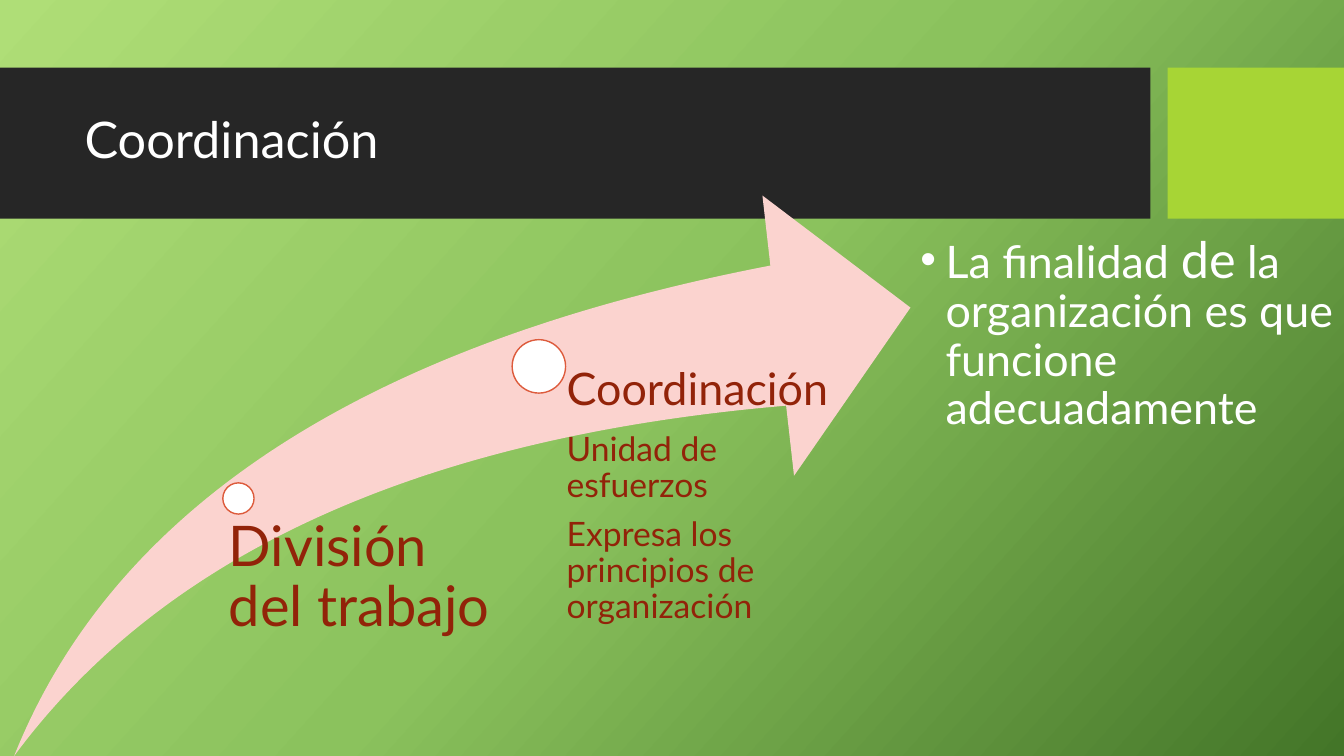
from copy import deepcopy

from lxml.etree import SubElement
from pptx import Presentation
from pptx.dml.color import RGBColor
from pptx.enum.shapes import MSO_SHAPE as Shape
from pptx.enum.text import MSO_ANCHOR as Anchor
from pptx.oxml.ns import qn
from pptx.util import Inches, Pt

FONT = "Lato"
COLORS = {
    "light": "AFDE77",
    "middle": "8BC25D",
    "deep": "437528",
    "band": "262626",
    "lime": "A7D535",
    "white": "FFFFFF",
    "pink": "FBD3CF",
    "ring": "DD5B3C",
    "rust": "922309",
}


def color(name):
    return RGBColor.from_string(COLORS[name])


def paint_background(page, names, angle):
    """Fill the page with evenly spaced gradient stops; angle is clockwise."""
    fill = page.background.fill
    fill.gradient()
    fill.gradient_angle = 360 - angle
    stop_list = page.element.find(".//" + qn("a:gsLst"))
    while len(stop_list) < len(names):
        stop_list.append(deepcopy(stop_list[0]))
    for index, (stop, name) in enumerate(zip(fill.gradient_stops, names)):
        stop.position = index / (len(names) - 1)
        stop.color.rgb = color(name)


def add_figure(page, kind, left, top, width, height, fill, line=None):
    figure = page.shapes.add_shape(
        kind, Inches(left), Inches(top), Inches(width), Inches(height))
    figure.shadow.inherit = False
    figure.fill.solid()
    figure.fill.fore_color.rgb = color(fill)
    if line:
        figure.line.color.rgb = color(line)
        figure.line.width = Pt(1)
    else:
        figure.line.fill.background()
    return figure


def add_bullet(para, indent):
    properties = para._p.get_or_add_pPr()
    properties.set("marL", str(Inches(indent)))
    properties.set("indent", str(-Inches(indent)))
    SubElement(properties, qn("a:buFont"), typeface="Arial")
    SubElement(properties, qn("a:buChar"), char="•")


def add_text(page, left, top, width, height, paragraphs, ink="white",
             insets=(0.1, 0.05, 0.1, 0.05), anchor=Anchor.TOP, bullet=False):
    """Each paragraph is (list of (text, size) spans, points of space after)."""
    box = page.shapes.add_textbox(
        Inches(left), Inches(top), Inches(width), Inches(height))
    frame = box.text_frame
    frame.word_wrap = True
    frame.vertical_anchor = anchor
    (frame.margin_left, frame.margin_top,
     frame.margin_right, frame.margin_bottom) = map(Inches, insets)
    for index, (spans, space_after) in enumerate(paragraphs):
        para = frame.add_paragraph() if index else frame.paragraphs[0]
        if bullet:
            add_bullet(para, 0.25)
        para.line_spacing = 0.9
        para.space_after = Pt(space_after)
        for text, size in spans:
            span = para.add_run()
            span.text = text
            span.font.name = FONT
            span.font.size = Pt(size)
            span.font.color.rgb = color(ink)


def main():
    deck = Presentation()
    deck.slide_width, deck.slide_height = Inches(13.33), Inches(7.5)
    page = deck.slides.add_slide(deck.slide_layouts[6])
    paint_background(page, ["light", "middle", "deep"], 42)

    # Title band
    add_figure(page, Shape.RECTANGLE, 0, 0.67, 11.41, 1.5, "band")
    add_figure(page, Shape.RECTANGLE, 11.58, 0.67, 1.75, 1.5, "lime")
    add_text(page, 0.74, 0.82, 10.51, 1.18, [([("Coordinación", 36)], 0)],
             anchor=Anchor.MIDDLE)

    # Purpose of the organization
    purpose = [("La finalidad ", 32), ("de", 36),
               (" la organización es que funcione adecuadamente", 32)]
    add_text(page, 9.03, 2.28, 4.3, 2.03, [(purpose, 0)], bullet=True)

    # Rising arrow with its two milestones
    arrow = add_figure(page, Shape.SWOOSH_ARROW, 0.14, 1.94, 8.89, 5.56, "pink")
    arrow.adjustments[0] = arrow.adjustments[1] = 0.25
    for left, top, size in [(2.21, 4.79, 0.31), (5.08, 3.37, 0.53)]:
        add_figure(page, Shape.OVAL, left, top, size, size, "white", "ring")

    add_text(page, 2.11, 5.14, 2.94, 1.37,
             [([("División del trabajo", 40)], 0)],
             ink="rust", insets=(0.16, 0, 0, 0))
    add_text(page, 5.34, 3.64, 2.89, 3.68,
             [([("Coordinación", 32)], 12),
              ([("Unidad de esfuerzos", 24)], 9),
              ([("Expresa los principios de organización", 24)], 0)],
             ink="rust", insets=(0.28, 0, 0, 0))

    deck.save("out.pptx")


if __name__ == "__main__":
    main()
